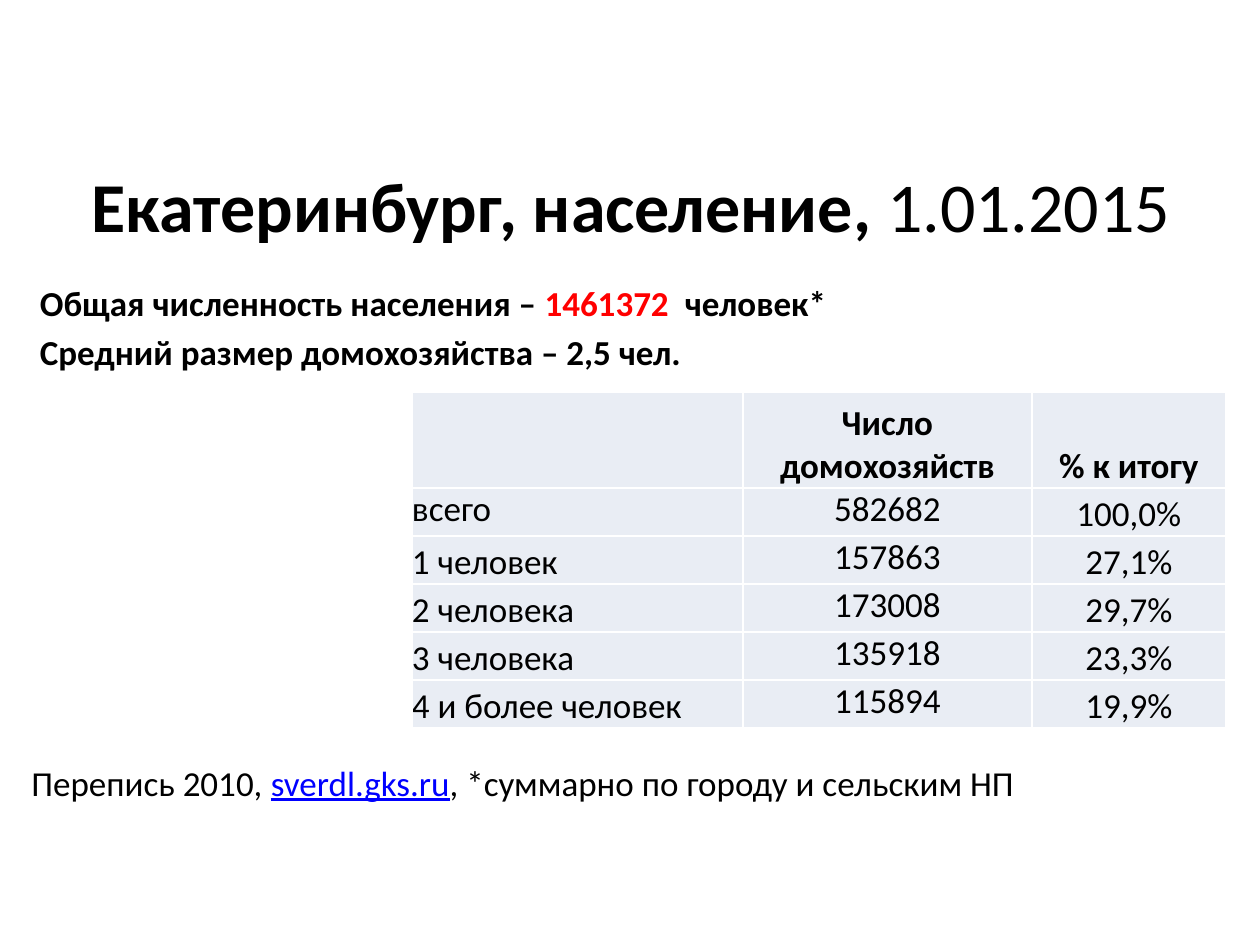
from lxml.etree import SubElement
from pptx import Presentation
from pptx.dml.color import RGBColor
from pptx.enum.text import MSO_ANCHOR, PP_ALIGN
from pptx.oxml.ns import qn
from pptx.util import Emu, Pt

PIXELS_PER_INCH = 126
BLACK, RED, BLUE, WHITE, PALE = "000000", "FF0000", "0000FF", "FFFFFF", "E9EDF4"
BODY = {"name": "Calibri", "size": Pt(20), "bold": False}
STRONG = BODY | {"bold": True}
TITLE = BODY | {"size": Pt(40)}
COLUMN_WIDTHS = (331, 289, 194)
HEADER_HEIGHT, ROW_HEIGHT = 96, 48
HOUSEHOLDS = (
    ("", "Число домохозяйств", "% к итогу"),
    ("всего", "582682", "100,0%"),
    ("1 человек", "157863", "27,1%"),
    ("2 человека", "173008", "29,7%"),
    ("3 человека", "135918", "23,3%"),
    ("4 и более человек", "115894", "19,9%"),
)


def px(length):
    """Turn px into EMU."""
    return Emu(round(length * 914400 / PIXELS_PER_INCH))


def color(value):
    """Turn a hex string into a colour."""
    return RGBColor.from_string(value)


def set_all(target, values):
    """Set the attributes named in a dict."""
    for name, value in values.items():
        setattr(target, name, value)


def add_runs(paragraph, runs):
    """Add runs given as text, font values and colour."""
    for text, values, hex_color in runs:
        run = paragraph.add_run()
        run.text = text
        set_all(run.font, values)
        run.font.color.rgb = color(hex_color)


def add_text(slide, box, paragraphs, anchor=MSO_ANCHOR.TOP, align=PP_ALIGN.LEFT):
    """Place a wrapping text box holding the given paragraphs."""
    frame = slide.shapes.add_textbox(*map(px, box)).text_frame
    set_all(frame, {"word_wrap": True, "vertical_anchor": anchor})
    for index, runs in enumerate(paragraphs):
        paragraph = frame.add_paragraph() if index else frame.paragraphs[0]
        set_all(paragraph, {"alignment": align, "space_before": Pt(4 if index else 0)})
        add_runs(paragraph, runs)
    return frame


def add_title(slide, box):
    """Place the centred heading."""
    runs = [("Екатеринбург, население, ", TITLE | {"bold": True}, BLACK),
            ("1.01.2015", TITLE, BLACK)]
    add_text(slide, box, [runs], MSO_ANCHOR.MIDDLE, PP_ALIGN.CENTER)


def add_summary(slide, box):
    """Place the two lines of key figures."""
    frame = add_text(slide, box, [
        [("Общая численность населения – ", STRONG, BLACK),
         ("1461372 ", STRONG, RED), (" человек*", STRONG, BLACK)],
        [("Средний размер домохозяйства – 2,5 чел.", STRONG, BLACK)],
    ])
    frame.margin_left = px(20)


def add_source_note(slide, box):
    """Place the note on the data source."""
    add_text(slide, box, [[
        ("Перепись 2010, ", BODY, BLACK),
        ("sverdl.gks.ru", BODY | {"underline": True}, BLUE),
        (", *суммарно по городу и сельским НП", BODY, BLACK),
    ]])


def style_cell(cell):
    """Give a cell white borders, a pale fill and no margins."""
    properties = cell._tc.get_or_add_tcPr()
    for side in ("a:lnL", "a:lnR", "a:lnT", "a:lnB"):
        line = SubElement(properties, qn(side), w=str(Pt(1)))
        fill = SubElement(line, qn("a:solidFill"))
        SubElement(fill, qn("a:srgbClr"), val=WHITE)
    cell.fill.solid()
    cell.fill.fore_color.rgb = color(PALE)
    set_all(cell, dict.fromkeys(
        ("margin_left", "margin_right", "margin_top", "margin_bottom"), 0))


def add_household_table(slide, box):
    """Place the table of households by size."""
    table = slide.shapes.add_table(
        len(HOUSEHOLDS), len(COLUMN_WIDTHS), *map(px, box)).table
    set_all(table, {"first_row": False, "horz_banding": False})
    for column, width in zip(table.columns, COLUMN_WIDTHS):
        column.width = px(width)
    for row_index, values in enumerate(HOUSEHOLDS):
        table.rows[row_index].height = px(ROW_HEIGHT if row_index else HEADER_HEIGHT)
        for column_index, text in enumerate(values):
            cell = table.cell(row_index, column_index)
            style_cell(cell)
            at_top = row_index and (column_index == 1 or row_index + column_index == 1)
            cell.vertical_anchor = MSO_ANCHOR.TOP if at_top else MSO_ANCHOR.BOTTOM
            paragraph = cell.text_frame.paragraphs[0]
            paragraph.alignment = PP_ALIGN.CENTER if column_index else PP_ALIGN.LEFT
            if text:
                add_runs(paragraph, [(text, BODY if row_index else STRONG, BLACK)])


def main():
    """Build and save the slide."""
    presentation = Presentation()
    set_all(presentation, {"slide_width": px(1260), "slide_height": px(945)})
    slide = presentation.slides.add_slide(presentation.slide_layouts[6])
    add_title(slide, (64, 125, 1134, 158))
    add_source_note(slide, (19, 755, 1206, 55))
    table_height = HEADER_HEIGHT + ROW_HEIGHT * (len(HOUSEHOLDS) - 1)
    add_household_table(slide, (412, 392, sum(COLUMN_WIDTHS), table_height))
    add_summary(slide, (20, 275, 1221, 117))
    presentation.save("out.pptx")


if __name__ == "__main__":
    main()
